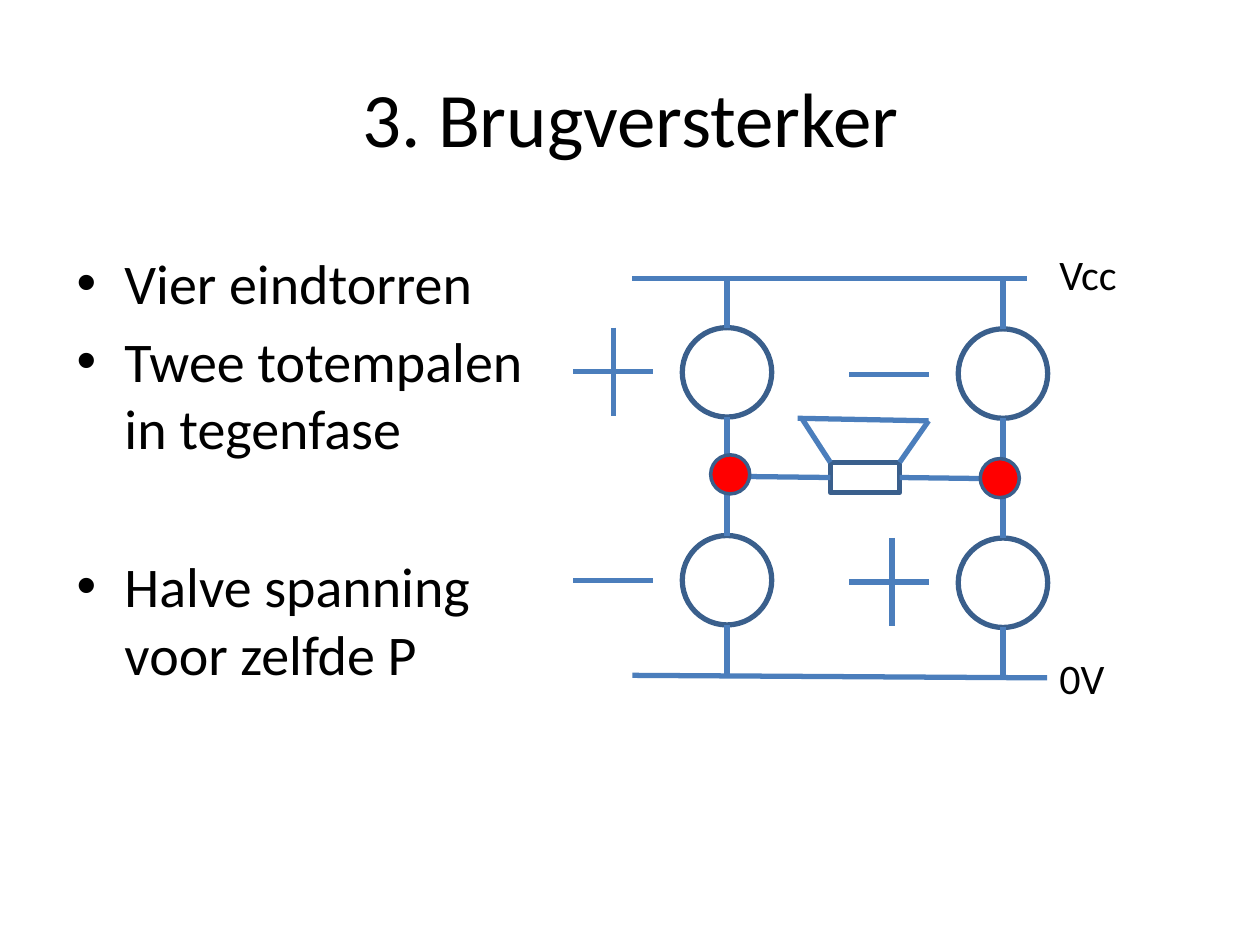
from lxml import etree
from pptx import Presentation
from pptx.dml.color import RGBColor
from pptx.enum import shapes, text
from pptx.oxml.ns import qn
from pptx.util import Inches, Pt

WIRE, OUTLINE, RED, BLACK = "4B7EBC", "3A5F8C", "FF0000", "000000"


def colour(hex_value):
    return RGBColor.from_string(hex_value)


def write(paragraph, content, size=24, align=text.PP_ALIGN.LEFT, before=0, bullet=None):
    """Put formatted text in a paragraph; a vertical tab breaks the line."""
    paragraph.text = content
    paragraph.alignment = align
    paragraph.space_before = Pt(before)
    for run in paragraph.runs:
        run.font.size = Pt(size)
        run.font.name = "Calibri"
        run.font.color.rgb = colour(BLACK)
    if bullet:
        properties = paragraph._p.get_or_add_pPr()
        properties.set("marL", str(Inches(0.38)))
        properties.set("indent", str(Inches(-0.38)))
        font = etree.SubElement(properties, qn("a:buFont"))
        font.set("typeface", "Arial")
        etree.SubElement(properties, qn("a:buChar")).set("char", bullet)


class Circuit:
    """Drawing style and the slide being drawn on."""

    def __init__(self, slide, weight=3):
        self.slide = slide
        self.weight = weight

    def words(self, left, top, width, height, anchor=text.MSO_ANCHOR.TOP):
        """Add a text box and return its text frame."""
        frame = self.slide.shapes.add_textbox(*map(Inches, (left, top, width, height))).text_frame
        frame.word_wrap = True
        frame.vertical_anchor = anchor
        return frame

    def wire(self, x1, y1, x2, y2):
        line = self.slide.shapes.add_connector(
            shapes.MSO_CONNECTOR.STRAIGHT, *map(Inches, (x1, y1, x2, y2)))
        line.line.color.rgb = colour(WIRE)
        line.line.width = Pt(self.weight)
        etree.SubElement(line._element.spPr, qn("a:effectLst"))
        return line

    def component(self, kind, left, top, width, height, fill=None, weight=None):
        shape = self.slide.shapes.add_shape(kind, *map(Inches, (left, top, width, height)))
        shape.shadow.inherit = False
        if fill:
            shape.fill.solid()
            shape.fill.fore_color.rgb = colour(fill)
        else:
            shape.fill.background()
        shape.line.color.rgb = colour(OUTLINE)
        shape.line.width = Pt(weight or self.weight)
        return shape

    def circle(self, left, top, size, **style):
        return self.component(shapes.MSO_SHAPE.OVAL, left, top, size, size, **style)

    def sign(self, left, y, plus_x=None):
        """Draw a minus, or a plus when the x of its upright is given."""
        self.wire(left, y, left + 0.63, y)
        if plus_x:
            self.wire(plus_x, y - 0.35, plus_x, y + 0.35)

    def totem_pole(self, x, rail_top, upper, lower, rail_bottom, size=0.71):
        """Stack two transistors between the supply rails."""
        for top in (upper, lower):
            self.circle(x - size / 2, top, size)
        ends = (rail_top, upper, upper + size, lower, lower + size, rail_bottom)
        for start, end in zip(ends[::2], ends[1::2]):
            self.wire(x, start, x, end)


def main():
    deck = Presentation()
    deck.slide_width, deck.slide_height = Inches(10), Inches(7.5)
    circuit = Circuit(deck.slides.add_slide(deck.slide_layouts[6]))

    title = circuit.words(0.2, 0.3, 9.61, 1.25, text.MSO_ANCHOR.MIDDLE)
    write(title.paragraphs[0], "3. Brugversterker", size=44, align=text.PP_ALIGN.CENTER)

    points = circuit.words(0.51, 1.92, 7.64, 5.37)
    for i, (point, before) in enumerate([
            ("Vier eindtorren", 6.4),
            ("Twee totempalen\vin tegenfase", 6.4),
            ("Halve spanning\vvoor zelfde P", 52)]):
        paragraph = points.add_paragraph() if i else points.paragraphs[0]
        write(paragraph, point, size=32, before=before, bullet="•")

    for rail, top in (("Vcc", 1.92), ("0V", 5.13)):
        write(circuit.words(8.31, top, 0.79, 0.5).paragraphs[0], rail)
    circuit.wire(5.02, 2.21, 8.15, 2.21)
    circuit.wire(5.02, 5.36, 8.31, 5.38)

    circuit.totem_pole(5.77, 2.21, 2.6, 4.25, 5.36)
    circuit.totem_pole(7.96, 2.22, 2.61, 4.27, 5.37)
    circuit.sign(4.55, 2.95, plus_x=4.87)
    circuit.sign(4.55, 4.61)
    circuit.sign(6.74, 2.97)
    circuit.sign(6.74, 4.62, plus_x=7.08)

    speaker = circuit.component(shapes.MSO_SHAPE.RECTANGLE, 6.59, 3.67, 0.55, 0.24)
    circuit.wire(5.77, 3.78, 6.59, 3.79).end_connect(speaker, 1)
    circuit.wire(7.14, 3.79, 7.96, 3.8).begin_connect(speaker, 3)
    circuit.wire(6.37, 3.33, 6.59, 3.67)
    circuit.wire(6.33, 3.32, 7.37, 3.34)
    circuit.wire(7.37, 3.34, 7.14, 3.67)

    for left, top in ((5.64, 3.61), (7.78, 3.64)):
        circuit.circle(left, top, 0.31, fill=RED, weight=2)

    deck.save("out.pptx")


if __name__ == "__main__":
    main()
